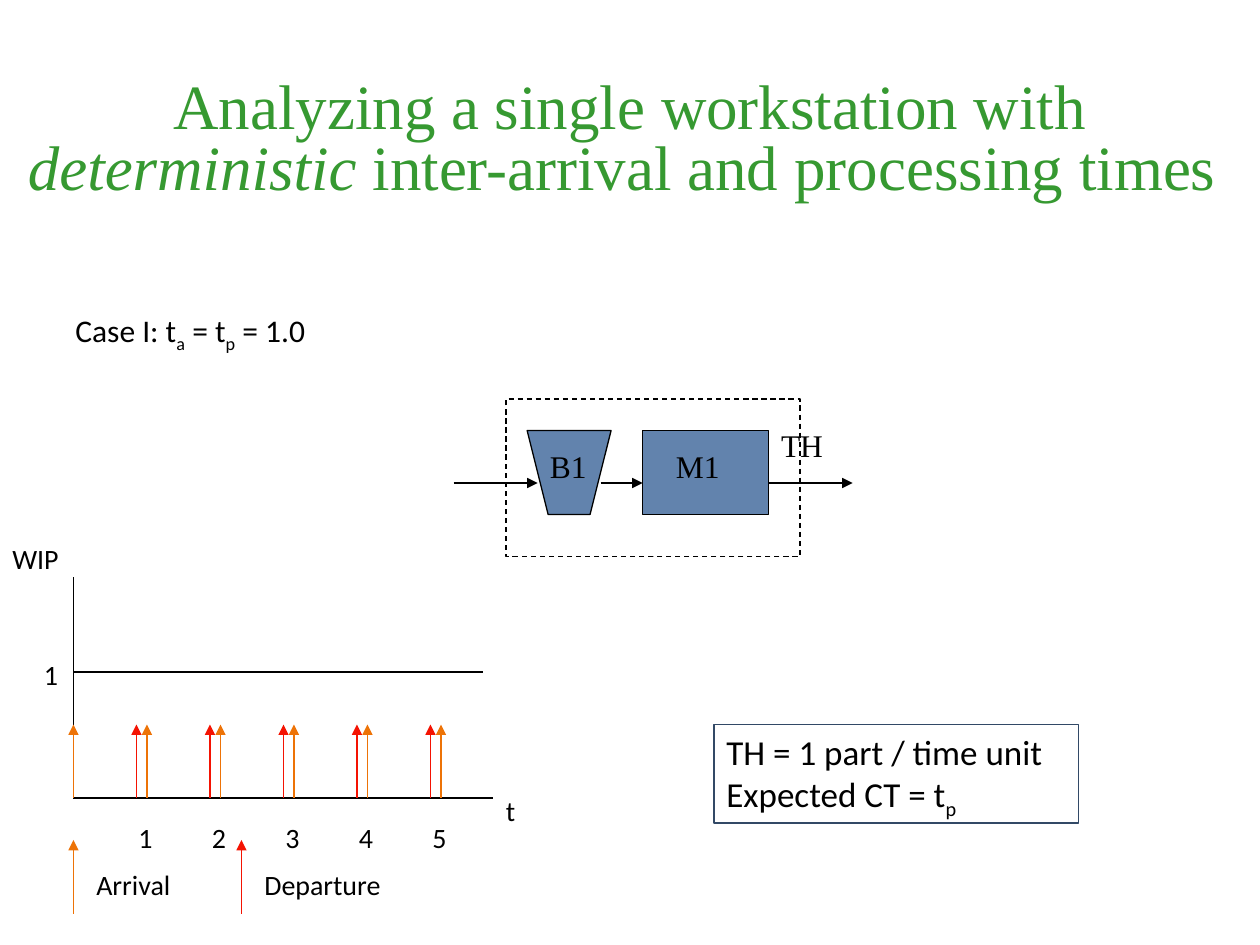
from dataclasses import dataclass

from lxml.etree import SubElement
from pptx import Presentation
from pptx.dml.color import RGBColor
from pptx.enum.dml import MSO_LINE
from pptx.enum.shapes import MSO_CONNECTOR, MSO_SHAPE
from pptx.enum.text import MSO_ANCHOR, MSO_AUTO_SIZE, PP_ALIGN
from pptx.oxml.ns import qn
from pptx.util import Inches, Pt

BLACK = RGBColor(0x00, 0x00, 0x00)
GREEN = RGBColor(0x36, 0x99, 0x31)
STEEL = RGBColor(0x62, 0x83, 0xAD)
NAVY = RGBColor(0x32, 0x49, 0x66)
ORANGE = RGBColor(0xED, 0x73, 0x07)
RED = RGBColor(0xF4, 0x13, 0x02)
SANS, SERIF = "Calibri", "Times New Roman"

deck = Presentation()
deck.slide_width, deck.slide_height = Inches(10), Inches(7.5)
slide = deck.slides.add_slide(deck.slide_layouts[5])
shapes = slide.shapes


def grid(n: float) -> int:
    """Turn grid steps into a length: 120 columns by 90 rows."""
    return round(deck.slide_width * n / 120)


@dataclass
class Run:
    text: str
    low: bool = False
    slant: bool = False


@dataclass
class Label:
    col: float
    row: float
    wide: float
    high: float
    runs: list[Run]
    size: int = 16
    font: str = SANS


@dataclass
class Line:
    col: float
    row: float
    to_col: float
    to_row: float
    color: RGBColor = BLACK
    arrow: bool = True


def add_runs(para, runs: list[Run], size: int, font: str, color=BLACK) -> None:
    for part in runs:
        run = para.add_run()
        run.text = part.text
        face = run.font
        face.size, face.name = Pt(size), font
        face.color.rgb = color
        face.italic = part.slant
        if part.low:
            face._element.set("baseline", "-25000")


def fit(frame) -> None:
    frame.word_wrap = False
    frame.auto_size = MSO_AUTO_SIZE.SHAPE_TO_FIT_TEXT
    frame.vertical_anchor = MSO_ANCHOR.TOP


def add_label(item: Label) -> None:
    box = shapes.add_textbox(*map(grid, (item.col, item.row, item.wide, item.high)))
    fit(box.text_frame)
    add_runs(box.text_frame.paragraphs[0], item.runs, item.size, item.font)


def add_line(item: Line) -> None:
    ends = map(grid, (item.col, item.row, item.to_col, item.to_row))
    link = shapes.add_connector(MSO_CONNECTOR.STRAIGHT, *ends)
    link.line.color.rgb, link.line.width = item.color, Pt(0.75)
    if item.arrow:
        SubElement(link.line._get_or_add_ln(), qn("a:tailEnd"), type="triangle")
    SubElement(link._element.spPr, qn("a:effectLst"))


def style(shape, fill=None, edge=BLACK) -> None:
    shape.shadow.inherit = False
    if fill is None:
        shape.fill.background()
    else:
        shape.fill.solid()
        shape.fill.fore_color.rgb = fill
    shape.line.color.rgb, shape.line.width = edge, Pt(0.75)


def add_rect(col: float, row: float, wide: float, high: float, fill=None, edge=BLACK):
    rect = shapes.add_shape(MSO_SHAPE.RECTANGLE, *map(grid, (col, row, wide, high)))
    style(rect, fill, edge)
    return rect


# Title
title = shapes.title
title.left, title.top, title.width, title.height = map(grid, (0, 4, 120, 19))
title.text_frame.word_wrap = True
title.text_frame.auto_size = MSO_AUTO_SIZE.NONE
title.text_frame.vertical_anchor = MSO_ANCHOR.MIDDLE
head = title.text_frame.paragraphs[0]
head.alignment, head.line_spacing = PP_ALIGN.CENTER, 0.8
add_runs(head, [Run("Analyzing a single workstation with "),
                Run("deterministic", slant=True),
                Run(" inter-arrival and processing times ")], 36, SERIF, GREEN)

# Workstation: machine, buffer and dashed border
LEFT, MID = 43.2, 46
add_rect(LEFT + 18, 41, 12, 8, STEEL)
pen = shapes.build_freeform(grid(LEFT + 7), grid(41))
pen.add_line_segments([(grid(LEFT + c), grid(r))
                       for c, r in ((9, 49), (13, 49), (15, 41))], close=True)
style(pen.convert_to_shape(), STEEL)
add_rect(LEFT + 5, 38, 28, 15).line.dash_style = MSO_LINE.DASH
for start, stop in ((0, 8), (14, 18), (30, 38)):
    add_line(Line(LEFT + start, MID, LEFT + stop, MID))
for name, col, row, wide in (("TH", 30, 40, 7.8), ("B1", 8, 42, 7.1), ("M1", 20, 42, 7.9)):
    add_label(Label(LEFT + col, row, wide, 6, [Run(name)], 18, SERIF))

# Case
add_label(Label(6, 29, 36.1, 6, [Run("Case I: t"), Run("a", low=True), Run(" = t"),
                                 Run("p", low=True), Run(" = 1.0")], 18))

# Work in process over time: axes and level
BASE, ZERO, STEP, TALL = 76, 7, 7, 7
add_line(Line(ZERO, BASE, 47, BASE, arrow=False))
add_line(Line(ZERO, BASE, ZERO, 55, arrow=False))
add_line(Line(ZERO, 64, 46, 64, arrow=False))
for name, col, row, wide in (("t", 47, 75, 3), ("WIP", 0, 51, 7.7), ("1", 3, 62, 3.8)):
    add_label(Label(col, row, wide, 4.4, [Run(name)]))

# Arrivals, departures and time marks
for tick in range(6):
    spot = ZERO + STEP * tick
    add_line(Line(spot, BASE, spot, BASE - TALL, ORANGE))
    if tick:
        add_line(Line(spot - 1, BASE, spot - 1, BASE - TALL, RED))
        add_label(Label(spot - 2, 77.6, 3.8, 4.4, [Run(str(tick))]))

# Legend
for name, col, wide, color in (("Arrival", 7, 10, ORANGE), ("Departure", 23, 14.3, RED)):
    add_line(Line(col, 87, col, 87 - TALL, color))
    add_label(Label(col + 1, 82, wide, 4.4, [Run(name)]))

# Result
frame = add_rect(68, 69, 34.7, 9.4, edge=NAVY).text_frame
fit(frame)
rows = ([Run("TH = 1 part / time unit")], [Run("Expected CT = t"), Run("p", low=True)])
for place, runs in enumerate(rows):
    para = frame.add_paragraph() if place else frame.paragraphs[0]
    para.alignment = PP_ALIGN.LEFT
    add_runs(para, runs, 20, SANS)

deck.save("out.pptx")
